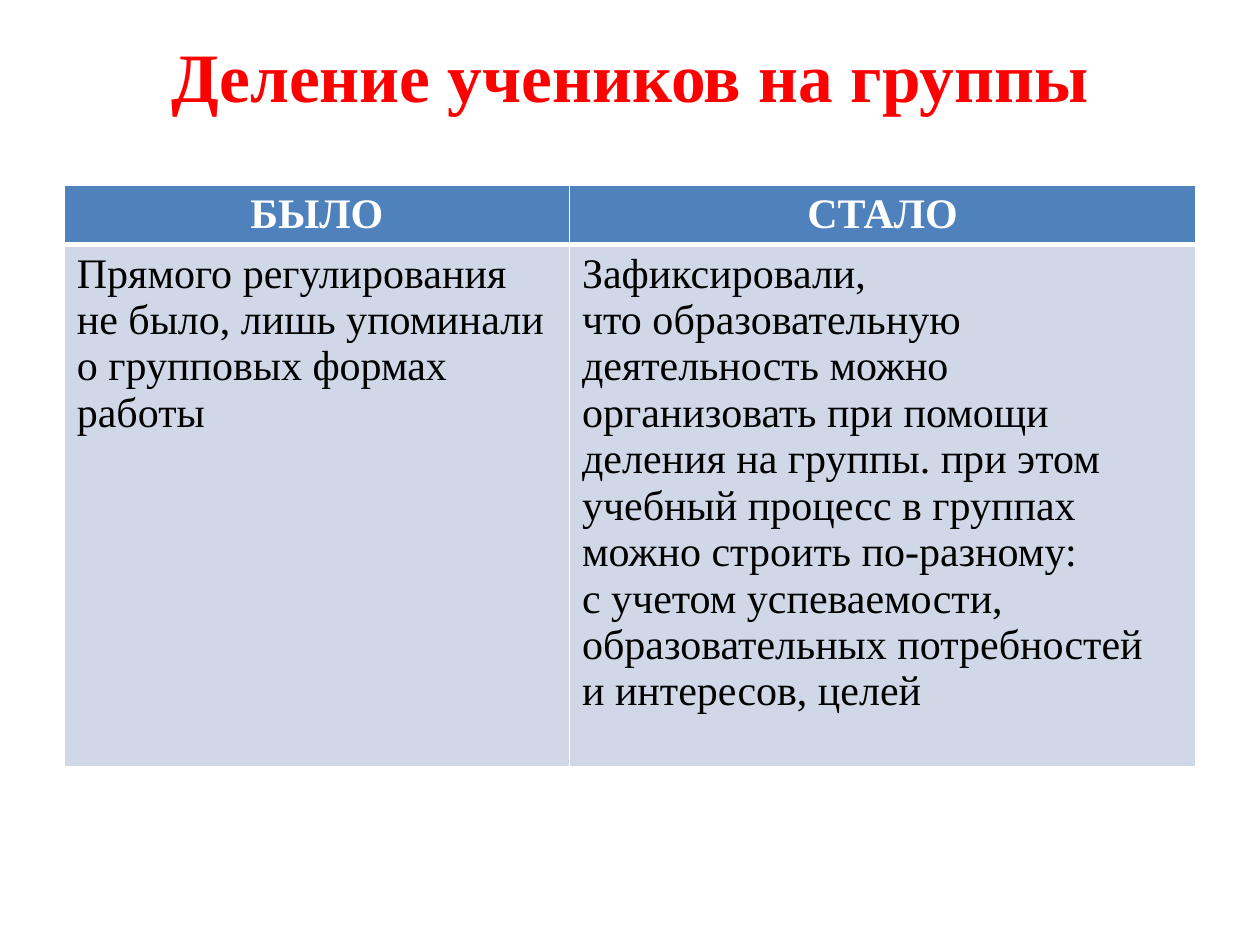
from dataclasses import dataclass

from lxml import etree
from pptx import Presentation
from pptx.dml.color import RGBColor
from pptx.enum import text as t
from pptx.oxml.ns import qn
from pptx.util import Inches, Pt

FONT = "Times New Roman"
TIE = "~"  # stands for a no-break space in the wording below


@dataclass
class Style:
    size: float
    color: str
    bold: bool
    align: t.PP_ALIGN


@dataclass
class Row:
    height: float
    fill: str
    style: Style
    lines: dict[str, float]
    texts: tuple[str, str]


TITLE = Style(39.6, "FF0000", True, t.PP_ALIGN.CENTER)
HEAD = Style(24, "FFFFFF", True, t.PP_ALIGN.CENTER)
BODY = Style(24, "000000", False, t.PP_ALIGN.LEFT)

WIDTHS = (4.01, 4.97)
ROWS = (
    Row(0.46, "4F81BD", HEAD, {"L": 1, "R": 1, "T": 1, "B": 3},
        ("БЫЛО", "СТАЛО")),
    Row(4.15, "D0D8E8", BODY, {"L": 1, "R": 1, "T": 3, "B": 1}, (
        "Прямого регулирования не~было, лишь упоминали "
        "о~групповых формах работы",
        "Зафиксировали, что~образовательную деятельность можно "
        "организовать при~помощи деления на~группы. при~этом "
        "учебный процесс в~группах можно строить по-разному: "
        "с~учетом успеваемости, образовательных потребностей "
        "и~интересов, целей",
    )),
)


def rgb(code: str) -> RGBColor:
    return RGBColor.from_string(code)


def write(frame, words: str, style: Style) -> None:
    frame.text = words.replace(TIE, chr(160))
    for para in frame.paragraphs:
        para.alignment = style.align
        for run in para.runs:
            run.font.name = FONT
            run.font.size = Pt(style.size)
            run.font.bold = style.bold
            run.font.color.rgb = rgb(style.color)


def add_title(slide, words: str) -> None:
    title = slide.shapes.title
    title.left, title.top = Inches(0.5), Inches(0.26)
    title.width, title.height = Inches(9), Inches(1.25)
    frame = title.text_frame
    frame.vertical_anchor = t.MSO_ANCHOR.TOP
    frame.margin_top = 0
    write(frame, words, TITLE)


def edge(cell, lines: dict[str, float], color: str) -> None:
    """Give a cell its borders, which must come before its fill."""
    props = cell._tc.get_or_add_tcPr()
    for spot, (side, width) in enumerate(lines.items()):
        line = etree.Element(qn(f"a:ln{side}"), w=str(Pt(width)))
        fill = etree.SubElement(line, qn("a:solidFill"))
        etree.SubElement(fill, qn("a:srgbClr"), val=color)
        props.insert(spot, line)


def add_grid(slide, rows: tuple[Row, ...]) -> None:
    high = sum(row.height for row in rows)
    table = slide.shapes.add_table(
        len(rows), len(WIDTHS), Inches(0.51), Inches(1.47),
        Inches(sum(WIDTHS)), Inches(high)).table
    for col, width in zip(table.columns, WIDTHS):
        col.width = Inches(width)
    for line, row in zip(table.rows, rows):
        line.height = Inches(row.height)
        for cell, words in zip(line.cells, row.texts):
            cell.fill.solid()
            cell.fill.fore_color.rgb = rgb(row.fill)
            edge(cell, row.lines, "FFFFFF")
            write(cell.text_frame, words, row.style)


def main() -> None:
    deck = Presentation()
    deck.slide_width, deck.slide_height = Inches(10), Inches(7.5)
    slide = deck.slides.add_slide(deck.slide_layouts[5])
    add_grid(slide, ROWS)
    add_title(slide, "Деление учеников на~группы")
    deck.save("out.pptx")


if __name__ == "__main__":
    main()
